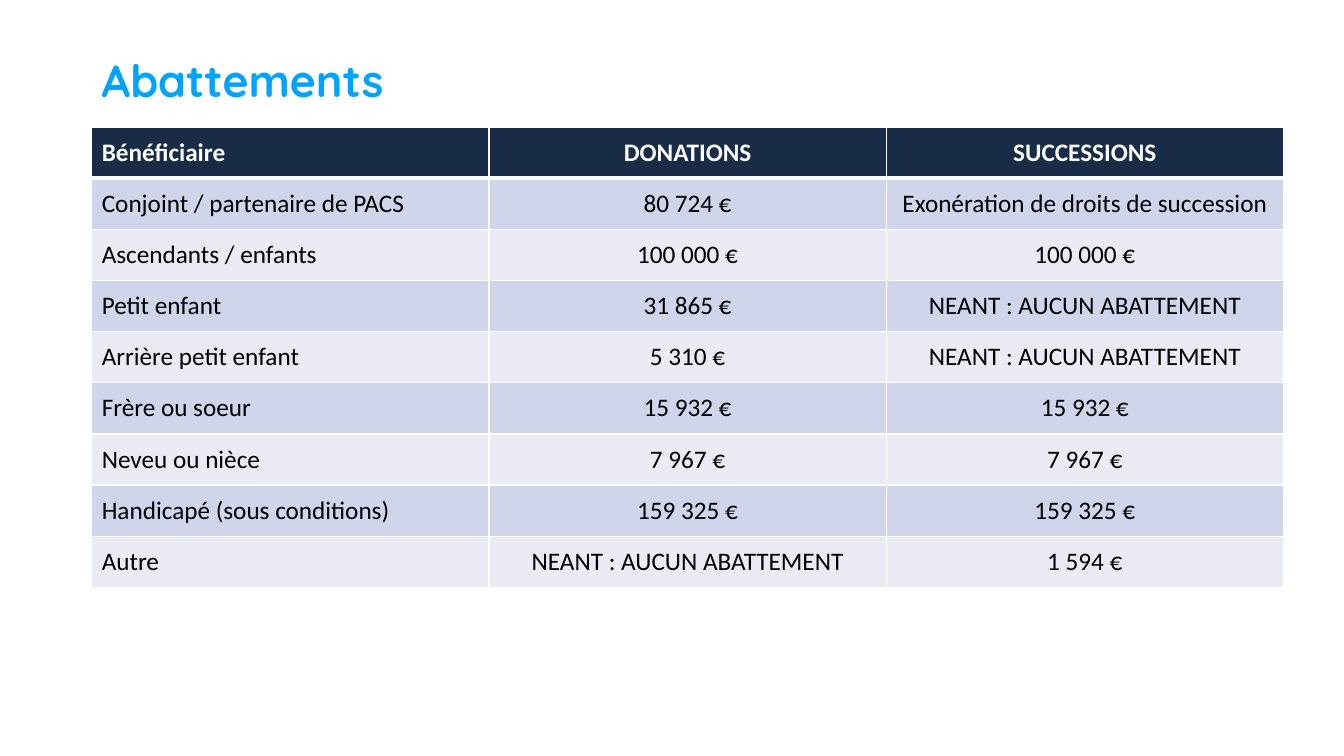
"""Build a slide with the table of tax allowances by beneficiary."""
from lxml import etree
from pptx import Presentation, util as u
from pptx.dml.color import RGBColor
from pptx.enum import text
from pptx.oxml import ns

ROWS = [
    ("Bénéficiaire", "DONATIONS", "SUCCESSIONS"),
    ("Conjoint / partenaire de PACS", "80 724 €", "Exonération de droits de succession"),
    ("Ascendants / enfants", "100 000 €", "100 000 €"),
    ("Petit enfant", "31 865 €", "NEANT : AUCUN ABATTEMENT"),
    ("Arrière petit enfant", "5 310 €", "NEANT : AUCUN ABATTEMENT"),
    ("Frère ou soeur", "15 932 €", "15 932 €"),
    ("Neveu ou nièce", "7 967 €", "7 967 €"),
    ("Handicapé (sous conditions)", "159 325 €", "159 325 €"),
    ("Autre", "NEANT : AUCUN ABATTEMENT", "1 594 €"),
]


def color(value):
    return RGBColor.from_string(value)


def write(tf, content, font="Calibri", size=18, fill="000000", bold=False,
          align=text.PP_ALIGN.LEFT, spacing=1.0):
    p = tf.paragraphs[0]
    p.alignment = align
    p.line_spacing = spacing
    r = p.add_run()
    r.text = content
    r.font.name = font
    r.font.size = u.Pt(size)
    r.font.bold = bold
    r.font.color.rgb = color(fill)


class Deck:
    WHITE = "FFFFFF"
    ACCENT = "00A4FF"
    HEADER = "182C47"
    BANDS = ("E9EBF5", "CFD5EA")

    def __init__(self, prs):
        self.s = prs.slides.add_slide(prs.slide_layouts[6])

    def title(self, content, left, top, width, height):
        box = self.s.shapes.add_textbox(*map(u.Inches, (left, top, width, height)))
        tf = box.text_frame
        tf.word_wrap = True
        write(tf, content, font="Quicksand", size=32, fill=self.ACCENT, bold=True, spacing=0.9)

    def borders(self, cell, top, bottom):
        tc_pr = cell._tc.get_or_add_tcPr()
        widths = {"lnL": 1, "lnR": 1, "lnT": top, "lnB": bottom}
        for i, (tag, width) in enumerate(widths.items()):
            ln = etree.Element(ns.qn(f"a:{tag}"), w=str(u.Pt(width)))
            fill = etree.SubElement(ln, ns.qn("a:solidFill"))
            etree.SubElement(fill, ns.qn("a:srgbClr"), val=self.WHITE)
            tc_pr.insert(i, ln)

    def cell(self, cell, content, row, col):
        header = row == 0
        cell.fill.solid()
        cell.fill.fore_color.rgb = color(self.HEADER if header else self.BANDS[row % 2])
        cell.vertical_anchor = text.MSO_ANCHOR.MIDDLE
        cell.margin_left = cell.margin_right = u.Inches(0.1)
        cell.margin_top = cell.margin_bottom = 0
        write(cell.text_frame, content, bold=header,
              fill=self.WHITE if header else "000000",
              align=text.PP_ALIGN.CENTER if col else text.PP_ALIGN.LEFT)
        self.borders(cell, top=3 if row == 1 else 1, bottom=3 if header else 1)

    def table(self, rows, left, top, width, height):
        frame = self.s.shapes.add_table(
            len(rows), len(rows[0]), *map(u.Inches, (left, top, width, height)))
        for i, row in enumerate(rows):
            for j, content in enumerate(row):
                self.cell(frame.table.cell(i, j), content, i, j)


def main():
    prs = Presentation()
    prs.slide_width = u.Inches(13.33)
    prs.slide_height = u.Inches(7.5)
    deck = Deck(prs)
    deck.table(ROWS, 0.91, 1.26, 11.82, 4.57)
    deck.title("Abattements", 0.91, 0.53, 11.22, 0.39)
    prs.save("out.pptx")


if __name__ == "__main__":
    main()
